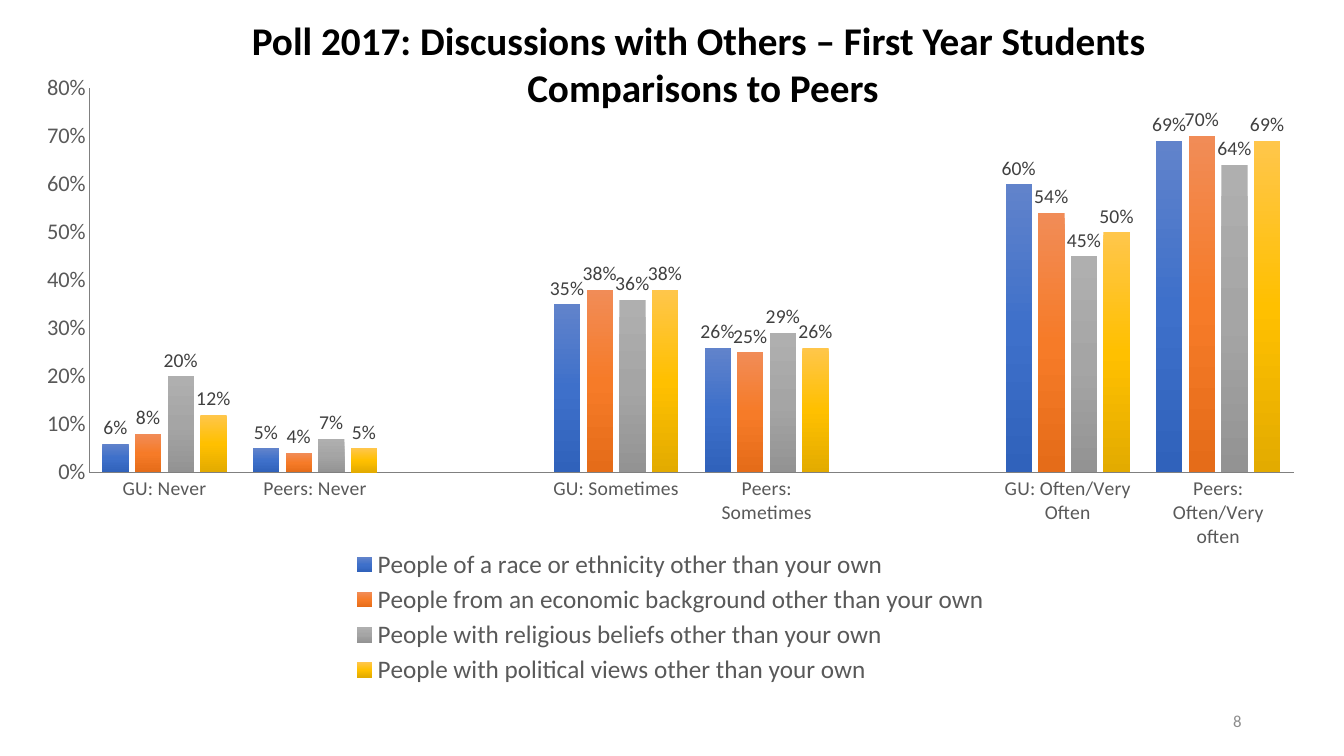
import copy

import lxml.etree
import pptx
import pptx.chart.data
import pptx.dml.color
import pptx.enum.chart
import pptx.enum.text
import pptx.oxml.ns
import pptx.util

EMU_PER_PX = 9525
FONT = "Calibri"
COLORS = {
    "title": "000000",
    "axis text": "595959",
    "axis line": "808080",
    "label": "404040",
    "slide number": "8C8C8C",
}
CATEGORIES = [
    "GU: Never", "Peers: Never", "",
    "GU: Sometimes", "Peers: Sometimes", "",
    "GU: Often/Very Often", "Peers: Often/Very often",
]
# Name, values by category, gradient from top to bottom
SERIES = [
    ("People of a race or ethnicity other than your own",
     [0.06, 0.05, None, 0.35, 0.26, None, 0.60, 0.69],
     ["6183CB", "3E70CA", "3062BB"]),
    ("People from an economic background other than your own",
     [0.08, 0.04, None, 0.38, 0.25, None, 0.54, 0.70],
     ["F18C57", "F67B28", "E56C19"]),
    ("People with religious beliefs other than your own",
     [0.20, 0.07, None, 0.36, 0.29, None, 0.45, 0.64],
     ["AFAFAF", "A5A5A5", "939393"]),
    ("People with political views other than your own",
     [0.12, 0.05, None, 0.38, 0.26, None, 0.50, 0.69],
     ["FFC64B", "FFC000", "E3AB00"]),
]


def px(length):
    return pptx.util.Emu(length * EMU_PER_PX)


def rgb(name):
    return pptx.dml.color.RGBColor.from_string(COLORS[name])


def style_font(font, size, color, bold=False):
    font.name = FONT
    font.size = pptx.util.Pt(size)
    font.bold = bold
    font.color.rgb = rgb(color)


def add_title(slide, left, top, width, height):
    title = slide.shapes.title
    title.left, title.top, title.width, title.height = map(px, (left, top, width, height))
    frame = title.text_frame
    frame.word_wrap = True
    frame.auto_size = pptx.enum.text.MSO_AUTO_SIZE.SHAPE_TO_FIT_TEXT
    frame.vertical_anchor = pptx.enum.text.MSO_ANCHOR.TOP
    lines = [
        "Poll 2017: Discussions with Others – First Year Students ",
        "Comparisons to Peers",
    ]
    for index, line in enumerate(lines):
        paragraph = frame.add_paragraph() if index else frame.paragraphs[0]
        paragraph.alignment = pptx.enum.text.PP_ALIGN.CENTER
        run = paragraph.add_run()
        run.text = line
        style_font(run.font, 28, "title", bold=True)


def add_slide_number(slide, left, top, width, height):
    box = slide.shapes.add_textbox(*map(px, (left, top, width, height)))
    frame = box.text_frame
    frame.word_wrap = True
    frame.vertical_anchor = pptx.enum.text.MSO_ANCHOR.MIDDLE
    paragraph = frame.paragraphs[0]
    paragraph.alignment = pptx.enum.text.PP_ALIGN.RIGHT
    run = paragraph.add_run()
    run.text = "8"
    style_font(run.font, 12, "slide number")


def set_layout(element, position, box, chart_size, inner=False):
    """Place a chart part by its left, top, width and height in px within the chart."""
    tag = pptx.oxml.ns.qn
    for old_layout in element.findall(tag("c:layout")):
        element.remove(old_layout)
    layout = lxml.etree.Element(tag("c:layout"))
    manual = lxml.etree.SubElement(layout, tag("c:manualLayout"))
    fractions = [length / total for length, total in zip(box, chart_size * 2)]
    settings = [("layoutTarget", "inner")] if inner else []
    settings += [("xMode", "edge"), ("yMode", "edge"), *zip("xywh", fractions)]
    for name, value in settings:
        lxml.etree.SubElement(manual, tag(f"c:{name}"), val=str(value))
    element.insert(position, layout)


def fill_gradient(series, colors):
    fill = series.format.fill
    fill.gradient()
    fill.gradient_angle = 270
    stop_list = series._element.xpath(".//a:gsLst")[0]
    stop_list.insert(1, copy.deepcopy(stop_list[0]))
    for index, (stop, color) in enumerate(zip(fill.gradient_stops, colors)):
        stop.position = index / (len(colors) - 1)
        stop.color.rgb = pptx.dml.color.RGBColor.from_string(color)


def style_axis(axis, size, line_width):
    axis.has_major_gridlines = False
    axis.major_tick_mark = pptx.enum.chart.XL_TICK_MARK.NONE
    axis.minor_tick_mark = pptx.enum.chart.XL_TICK_MARK.NONE
    style_font(axis.tick_labels.font, size, "axis text")
    axis.format.line.color.rgb = rgb("axis line")
    axis.format.line.width = pptx.util.Pt(line_width)


def style_series(series, colors):
    fill_gradient(series, colors)
    labels = series.data_labels
    labels.show_value = True
    labels.position = pptx.enum.chart.XL_LABEL_POSITION.OUTSIDE_END
    labels.number_format = "0%"
    labels.number_format_is_linked = False
    style_font(labels.font, 14, "label")


def add_discussion_chart(slide, left, top, width, height):
    data = pptx.chart.data.CategoryChartData(number_format="0%")
    data.categories = CATEGORIES
    for name, values, _ in SERIES:
        data.add_series(name, values)
    chart = slide.shapes.add_chart(
        pptx.enum.chart.XL_CHART_TYPE.COLUMN_CLUSTERED,
        *map(px, (left, top, width, height)), data,
    ).chart
    chart.has_title = False
    style_font(chart.font, 14, "title")

    plot = chart.plots[0]
    plot.gap_width = 100
    plot.overlap = -24
    plot.vary_by_categories = False
    for series, (_, _, colors) in zip(plot.series, SERIES):
        style_series(series, colors)

    style_axis(chart.category_axis, 14, 1)
    style_axis(chart.value_axis, 16, 0.75)
    chart.value_axis.minimum_scale = 0
    chart.value_axis.maximum_scale = 0.8
    chart.value_axis.major_unit = 0.1
    chart.value_axis.tick_labels.number_format = "0%"
    chart.value_axis.tick_labels.number_format_is_linked = False

    chart.has_legend = True
    legend = chart.legend
    legend.position = pptx.enum.chart.XL_LEGEND_POSITION.BOTTOM
    legend.include_in_layout = False
    style_font(legend.font, 18, "axis text")
    chart_size = (width, height)
    set_layout(legend._element, 1, (310, 459, 619, 138), chart_size)
    plot_area = chart._chartSpace.chart.plotArea
    set_layout(plot_area, 0, (66, 24, 1147, 366), chart_size, inner=True)


def main():
    presentation = pptx.Presentation()
    presentation.slide_width = px(1280)
    presentation.slide_height = px(720)
    slide = presentation.slides.add_slide(presentation.slide_layouts.get_by_name("Title Only"))
    add_slide_number(slide, 904, 667, 288, 38)
    add_title(slide, 173, 11, 993, 100)
    add_discussion_chart(slide, 19, 60, 1237, 600)
    presentation.save("out.pptx")


if __name__ == "__main__":
    main()
